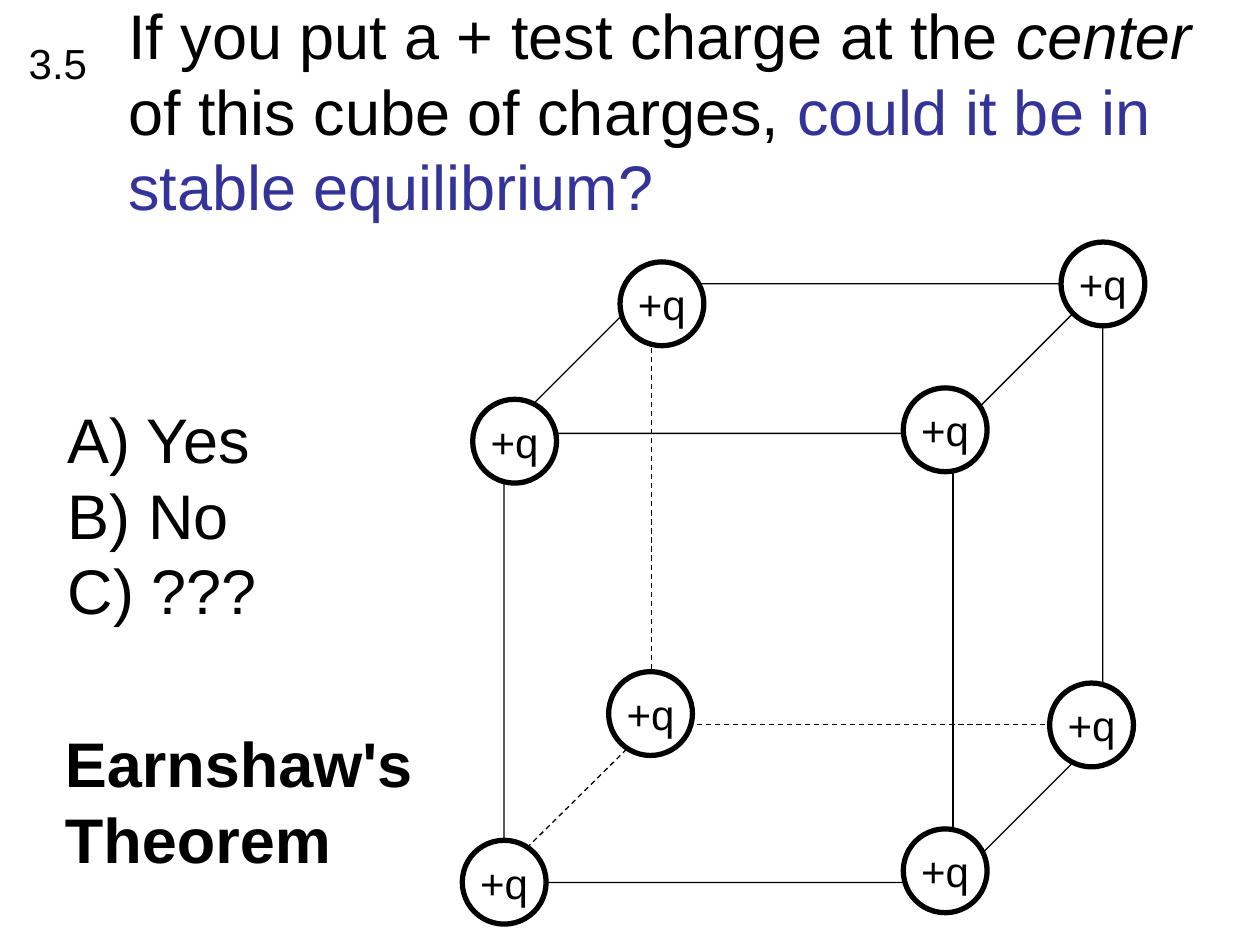
from dataclasses import dataclass

from lxml.etree import SubElement
from pptx import Presentation
from pptx.dml.color import RGBColor
from pptx.enum.dml import MSO_LINE
from pptx.enum.shapes import MSO_CONNECTOR, MSO_SHAPE
from pptx.enum.text import MSO_ANCHOR, MSO_AUTO_SIZE, PP_ALIGN
from pptx.oxml.ns import qn
from pptx.util import Cm, Pt


@dataclass(frozen=True)
class Theme:
    """Colours, font and sizes of the slide."""

    font: str = "Arial"
    ink: RGBColor = RGBColor(0x00, 0x00, 0x00)
    accent: RGBColor = RGBColor(0x33, 0x33, 0x99)
    paper: RGBColor = RGBColor(0xFF, 0xFF, 0xFF)
    large: Pt = Pt(36)
    small: Pt = Pt(24)
    thin: Pt = Pt(0.75)
    thick: Pt = Pt(3)


def assign(target, values):
    """Set every attribute named in a dict of format values."""
    for name, value in values.items():
        setattr(target, name, value)


class SlideBuilder:
    """Draws each kind of element on the current slide."""

    def __init__(self, slide, theme):
        """Keep the slide and its theme."""
        self.slide = slide
        self.theme = theme

    def place(self, shape, left, top, width, height):
        """Move and size a placeholder."""
        assign(shape, {"left": Cm(left), "top": Cm(top), "width": Cm(width), "height": Cm(height)})

    def run(self, paragraph, text, size, color=None, **font_values):
        """Add a formatted run to a paragraph."""
        run = paragraph.add_run()
        run.text = text
        assign(run.font, {"name": self.theme.font, "size": size, **font_values})
        run.font.color.rgb = color or self.theme.ink

    def outline(self, shape, width):
        """Give a shape or connector a black line."""
        shape.line.color.rgb = self.theme.ink
        shape.line.width = width

    def title(self, box, pieces):
        """Fill the title placeholder with text pieces."""
        shape = self.slide.shapes.title
        self.place(shape, *box)
        assign(shape.text_frame, {"auto_size": MSO_AUTO_SIZE.NONE, "word_wrap": True,
                                  "vertical_anchor": MSO_ANCHOR.MIDDLE})
        paragraph = shape.text_frame.paragraphs[0]
        paragraph.alignment = PP_ALIGN.LEFT
        for text, font_values in pieces:
            self.run(paragraph, text, self.theme.large, **font_values)

    def answers(self, box, texts):
        """Fill the body placeholder with lettered answers."""
        shape = self.slide.placeholders[1]
        self.place(shape, *box)
        frame = shape.text_frame
        assign(frame, {"auto_size": MSO_AUTO_SIZE.NONE, "word_wrap": False,
                       "vertical_anchor": MSO_ANCHOR.TOP})
        for index, text in enumerate(texts):
            paragraph = frame.add_paragraph() if index else frame.paragraphs[0]
            paragraph.space_before = Pt(0)
            properties = paragraph._p.get_or_add_pPr()
            properties.set("marL", str(Cm(1.27)))
            properties.set("indent", str(Cm(-1.27)))
            SubElement(properties, qn("a:buFont"), typeface=self.theme.font)
            SubElement(properties, qn("a:buAutoNum"), type="alphaUcParenR")
            self.run(paragraph, text, self.theme.large)

    def label(self, box, text, size, **font_values):
        """Add a wrapped text box."""
        frame = self.slide.shapes.add_textbox(*map(Cm, box)).text_frame
        frame.word_wrap = True
        self.run(frame.paragraphs[0], text, size, **font_values)

    def hidden_edge(self, start, end):
        """Add a dashed edge at the back of the cube."""
        edge = self.slide.shapes.add_connector(MSO_CONNECTOR.STRAIGHT, *map(Cm, start + end))
        self.outline(edge, self.theme.thin)
        edge.line.dash_style = MSO_LINE.DASH
        SubElement(edge._element.spPr, qn("a:effectLst"))

    def cube(self, left, top, side):
        """Add an unfilled cube."""
        shape = self.slide.shapes.add_shape(MSO_SHAPE.CUBE, *map(Cm, (left, top, side, side)))
        shape.adjustments[0] = 0.25
        shape.shadow.inherit = False
        shape.fill.background()
        self.outline(shape, self.theme.thin)

    def charge(self, left, top, diameter=1.69):
        """Add a circle marked as a positive charge."""
        box = map(Cm, (left, top, diameter, diameter))
        shape = self.slide.shapes.add_shape(MSO_SHAPE.OVAL, *box)
        shape.shadow.inherit = False
        shape.fill.solid()
        shape.fill.fore_color.rgb = self.theme.paper
        self.outline(shape, self.theme.thick)
        assign(shape.text_frame, {"word_wrap": False, "vertical_anchor": MSO_ANCHOR.MIDDLE})
        paragraph = shape.text_frame.paragraphs[0]
        paragraph.alignment = PP_ALIGN.CENTER
        self.run(paragraph, "+q", self.theme.small)


def main():
    """Build and save the slide."""
    presentation = Presentation()
    assign(presentation, {"slide_width": Cm(25.4), "slide_height": Cm(19.05)})
    theme = Theme()
    slide = presentation.slides.add_slide(presentation.slide_layouts[1])
    builder = SlideBuilder(slide, theme)

    builder.title((2.33, 0.42, 22.23, 3.6), [
        ("If you put a + test charge at the ", {}),
        ("center ", {"italic": True}),
        ("of this cube of charges, ", {}),
        ("could it be in stable equilibrium?", {"color": theme.accent}),
    ])
    builder.answers((1.11, 7.95, 4.32, 4.83), [" Yes", " No", " ???"])
    builder.label((0.33, 0.64, 2.2, 1.27), "3.5", theme.small)

    back_corner = (13.13, 14.61)
    for start in ((10.36, 17.35), (21.79, 14.61), (13.13, 5.92)):
        builder.hidden_edge(start, back_corner)
    builder.cube(10.16, 5.72, 12.07)
    for corner in ((9.53, 8.05), (21.16, 13.77), (21.39, 4.88), (12.5, 5.28),
                   (18.21, 7.82), (18.21, 16.71), (12.27, 13.54), (9.32, 16.94)):
        builder.charge(*corner)

    builder.label((1.06, 14.48, 7.62, 3.3), "Earnshaw's Theorem", theme.large, bold=True)
    presentation.save("out.pptx")


if __name__ == "__main__":
    main()
